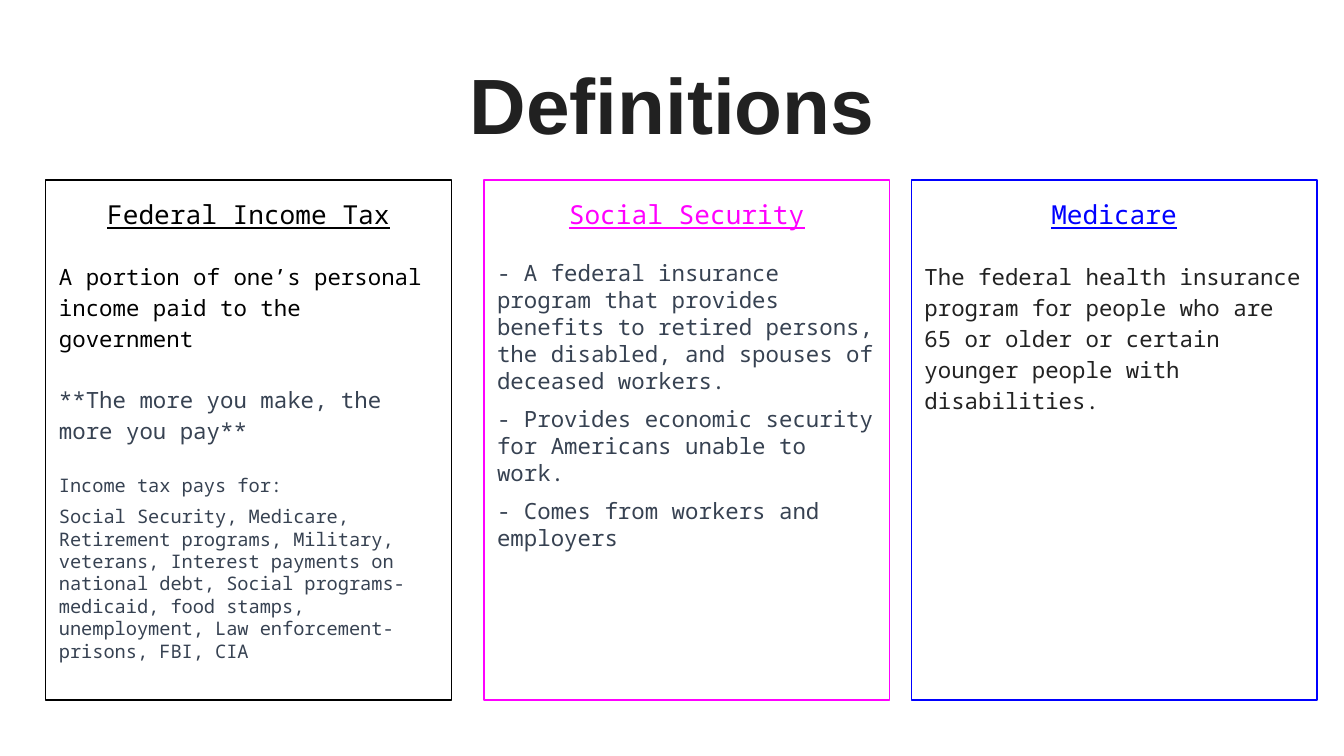
from pptx import Presentation
from pptx.dml.color import RGBColor
from pptx.enum.shapes import MSO_SHAPE
from pptx.enum.text import MSO_ANCHOR, PP_ALIGN
from pptx.util import Inches, Pt

BODY_FONT = "Noto Sans Mono"
SLATE = "374252"
LOOSE = 1.15

COLUMNS = [
    (0.34, "Federal Income Tax", "000000", [
        ("A portion of one’s personal income paid to the government", 12, "000000", LOOSE, 16),
        ("**The more you make, the more you pay**", 12, SLATE, LOOSE, 16),
        ("Income tax pays for:", 10, SLATE, 1.0, 16),
        ("Social Security, Medicare, Retirement programs, Military, veterans, "
         "Interest payments on national debt, Social programs- medicaid, food stamps, "
         "unemployment, Law enforcement- prisons, FBI, CIA", 10, SLATE, 1.0, 4.8),
    ]),
    (3.6, "Social Security", "FF00FF", [
        ("- A federal insurance program that provides benefits to retired persons, "
         "the disabled, and spouses of deceased workers.", 12, SLATE, 1.0, 16),
        ("- Provides economic security for Americans unable to work.", 12, SLATE, 1.0, 6),
        ("- Comes from workers and employers", 12, SLATE, 1.0, 6),
    ]),
    (6.78, "Medicare", "0000FF", [
        ("The federal health insurance program for people who are 65 or older "
         "or certain younger people with disabilities.", 12, "222222", LOOSE, 16),
    ]),
]


def rgb(color):
    return RGBColor.from_string(color)


def set_frame(tf, anchor, bottom=0.1):
    tf.word_wrap = True
    tf.vertical_anchor = anchor
    tf.margin_left = tf.margin_right = tf.margin_top = Inches(0.1)
    tf.margin_bottom = Inches(bottom)


def write(p, text, size, color, font=BODY_FONT, align=PP_ALIGN.LEFT,
          spacing=1.0, before=0, bold=False, underline=False):
    p.text = text
    p.alignment = align
    p.line_spacing = spacing
    p.space_before = Pt(before)
    for r in p.runs:
        r.font.name = font
        r.font.size = Pt(size)
        r.font.color.rgb = rgb(color)
        r.font.bold = bold
        r.font.underline = underline


def add_title(s, text):
    sp = s.shapes.add_textbox(Inches(0.34), Inches(0.32), Inches(9.32), Inches(0.88))
    tf = sp.text_frame
    set_frame(tf, MSO_ANCHOR.BOTTOM, bottom=0.08)
    write(tf.paragraphs[0], text, 42, "212121", font="Arial",
          align=PP_ALIGN.CENTER, bold=True)


def add_column(s, left, heading, color, paragraphs):
    sp = s.shapes.add_shape(MSO_SHAPE.RECTANGLE, Inches(left), Inches(1.34),
                            Inches(3.02), Inches(3.87))
    sp.shadow.inherit = False
    sp.fill.background()
    sp.line.color.rgb = rgb(color)
    sp.line.width = Pt(0.75)
    tf = sp.text_frame
    set_frame(tf, MSO_ANCHOR.TOP)
    write(tf.paragraphs[0], heading, 14, color, align=PP_ALIGN.CENTER,
          spacing=LOOSE, underline=True)
    for text, size, text_color, spacing, before in paragraphs:
        write(tf.add_paragraph(), text, size, text_color, spacing=spacing, before=before)


def main():
    prs = Presentation()
    prs.slide_width = Inches(10)
    prs.slide_height = prs.slide_width * 9 // 16
    s = prs.slides.add_slide(prs.slide_layouts[6])
    add_title(s, "Definitions")
    for column in COLUMNS:
        add_column(s, *column)
    prs.save("out.pptx")


if __name__ == "__main__":
    main()
